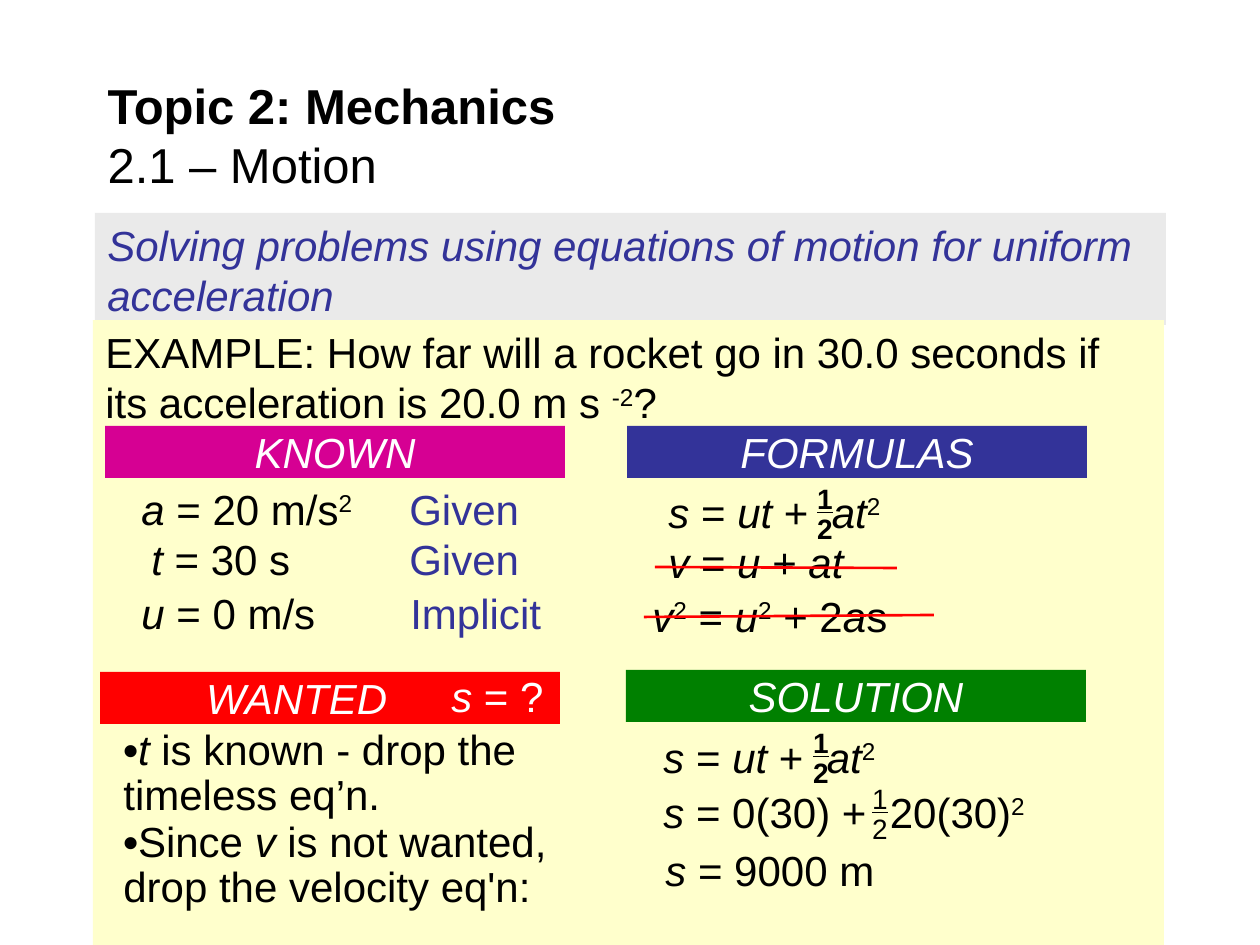
from lxml import etree
from pptx import Presentation
from pptx import util as u
from pptx.dml.color import RGBColor
from pptx.enum import shapes, text
from pptx.oxml.ns import qn

PX = 914400 / 126
BLACK = RGBColor(0x00, 0x00, 0x00)
WHITE = RGBColor(0xFF, 0xFF, 0xFF)
NAVY = RGBColor(0x33, 0x33, 0x99)
GREY = RGBColor(0xEA, 0xEA, 0xEA)
CREAM = RGBColor(0xFF, 0xFF, 0xCC)
MAGENTA = RGBColor(0xD6, 0x00, 0x93)
RED = RGBColor(0xFF, 0x00, 0x00)
GREEN = RGBColor(0x00, 0x80, 0x00)

# Text is a list of (words, style): i italic, b bold, u underlined,
# ^ superscript, + widened by one space for a fraction that follows
TITLE = [("Topic 2: Mechanics", "b"), ("2.1 – Motion", "")]
OBJECTIVE = [("Solving problems using equations of motion for uniform acceleration", "i")]
EXAMPLE = [("EXAMPLE: How far will a rocket go in 30.0 seconds if its "
            "acceleration is 20.0 m s ", ""), ("-2", "^"), ("?", "")]

# heading, left, top, fill
HEADINGS = [
    ("KNOWN", 105, 426, MAGENTA),
    ("FORMULAS", 627, 426, NAVY),
    ("WANTED", 100, 672, RED),
    ("SOLUTION", 626, 670, GREEN),
]
WANTED_INDENT = 106
WANTED = [("s", "i"), (" = ?", "")]

# quantity, its left, its source, source left, top
KNOWNS = [
    ([("a", "i"), (" = 20 m/s", ""), ("2", "^")], 129, "Given", 397, 483),
    ([("t", "i"), (" = 30 s", "")], 139, "Given", 397, 533),
    ([("u", "i"), (" = 0 m/s", "")], 129, "Implicit", 398, 587),
]

DISPLACEMENT = [("s ", "i"), ("= ", ""), ("ut", "i"), (" +", ""), (" ", "+"),
                ("at", "i"), ("2", "^")]
# equation, left, top
EQUATIONS = [
    (DISPLACEMENT, 656, 486),
    ([("v", "i"), (" = ", ""), ("u ", "i"), ("+ ", ""), ("at", "i")], 656, 536),
    ([("v", "i"), ("2", "^"), (" = ", ""), ("u", "i"), ("2", "^"), (" + 2", ""),
      ("a", "i"), ("s", "")], 640, 590),
    (DISPLACEMENT, 651, 731),
    ([("s ", "i"), ("= 0(30) +", ""), (" ", "+"), ("20(30)", ""), ("2", "^")], 651, 786),
    ([("s", "i"), (" = 9000 m", "")], 653, 844),
]
# left, top, style of each one-half
HALVES = [(803, 479, "b"), (799, 723, "b"), (858, 779, "")]
# left, top, right, bottom
STRIKES = [(655, 567, 897, 568), (644, 617, 934, 615)]

# reason, top, width
REASONS = [
    ([("•", "b"), ("t", "i"), (" is known - drop the timeless eq’n.", "")], 723, 501),
    ([("•", "b"), ("Since ", ""), ("v", "i"),
      (" is not wanted, drop the velocity eq'n:", "")], 815, 494),
]


def px(length):
    return u.Emu(round(length * PX))


def write(paragraph, runs, size=24, color=BLACK, align=text.PP_ALIGN.LEFT,
          spacing=0.9, before=5):
    paragraph.alignment = align
    paragraph.line_spacing = spacing
    paragraph.space_before = u.Pt(before)
    for words, style in runs:
        run = paragraph.add_run()
        run.text = words
        font = run.font
        font.name, font.size, font.color.rgb = "Arial", u.Pt(size), color
        font.bold, font.italic, font.underline = "b" in style, "i" in style, "u" in style
        if "^" in style:
            font._element.set("baseline", "30000")
        if "+" in style:
            font._element.set("spc", "667")


def label(slide, runs, left, top, width, height=52, **style):
    frame = slide.shapes.add_textbox(*map(px, (left, top, width, height))).text_frame
    frame.word_wrap = True
    write(frame.paragraphs[0], runs, **style)
    return frame


def panel(slide, runs, left, top, width, height, fill, indent=None, **style):
    shape = slide.shapes.add_shape(shapes.MSO_SHAPE.RECTANGLE,
                                   *map(px, (left, top, width, height)))
    shape.shadow.inherit = False
    shape.fill.solid()
    shape.fill.fore_color.rgb = fill
    shape.line.fill.background()
    frame = shape.text_frame
    frame.word_wrap = True
    frame.vertical_anchor = text.MSO_ANCHOR.TOP
    if indent:
        frame.margin_left = px(indent)
    write(frame.paragraphs[0], runs, **style)


def strike(slide, *ends):
    line = slide.shapes.add_connector(shapes.MSO_CONNECTOR.STRAIGHT, *map(px, ends))
    line.line.color.rgb = RED
    line.line.width = u.Pt(1.5)
    etree.SubElement(line._element.spPr, qn("a:effectLst"))


def add_title(slide):
    title = slide.shapes.title
    title.left, title.top, title.width, title.height = map(px, (95, 73, 1071, 123))
    frame = title.text_frame
    frame.word_wrap = True
    frame.auto_size = text.MSO_AUTO_SIZE.NONE
    frame.vertical_anchor = text.MSO_ANCHOR.MIDDLE
    paragraph = frame.paragraphs[0]
    topic, section = TITLE
    write(paragraph, [topic], size=28, spacing=1.0, before=0)
    paragraph.add_line_break()
    write(paragraph, [section], size=28, spacing=1.0, before=0)


def main():
    deck = Presentation()
    deck.slide_width, deck.slide_height = px(1260), px(945)
    slide = deck.slides.add_slide(deck.slide_layouts[5])
    add_title(slide)
    panel(slide, OBJECTIVE, 95, 213, 1071, 112, GREY, color=NAVY, spacing=1.0)
    panel(slide, EXAMPLE, 93, 320, 1071, 625, CREAM, spacing=1.0)

    for heading, left, top, fill in HEADINGS:
        place = ({"indent": WANTED_INDENT} if heading == "WANTED"
                 else {"align": text.PP_ALIGN.CENTER})
        panel(slide, [(heading, "i")], left, top, 460, 52, fill, color=WHITE, **place)
    label(slide, WANTED, 406, 670, 150, color=WHITE, align=text.PP_ALIGN.RIGHT)

    for quantity, left, origin, origin_left, top in KNOWNS:
        label(slide, quantity, left, top, 260)
        label(slide, [(origin, "")], origin_left, top, 165, color=NAVY)
    for reason, top, width in REASONS:
        label(slide, reason, 111, top, width, 102)
    for equation, left, top in EQUATIONS:
        label(slide, equation, left, top, 433, 46)
    for left, top, weight in HALVES:
        half = {"size": 16, "align": text.PP_ALIGN.CENTER, "before": 0}
        frame = label(slide, [("1", weight + "u")], left, top, 44, 58, **half)
        write(frame.add_paragraph(), [("2", weight)], **half)
    for ends in STRIKES:
        strike(slide, *ends)
    deck.save("out.pptx")


if __name__ == "__main__":
    main()
